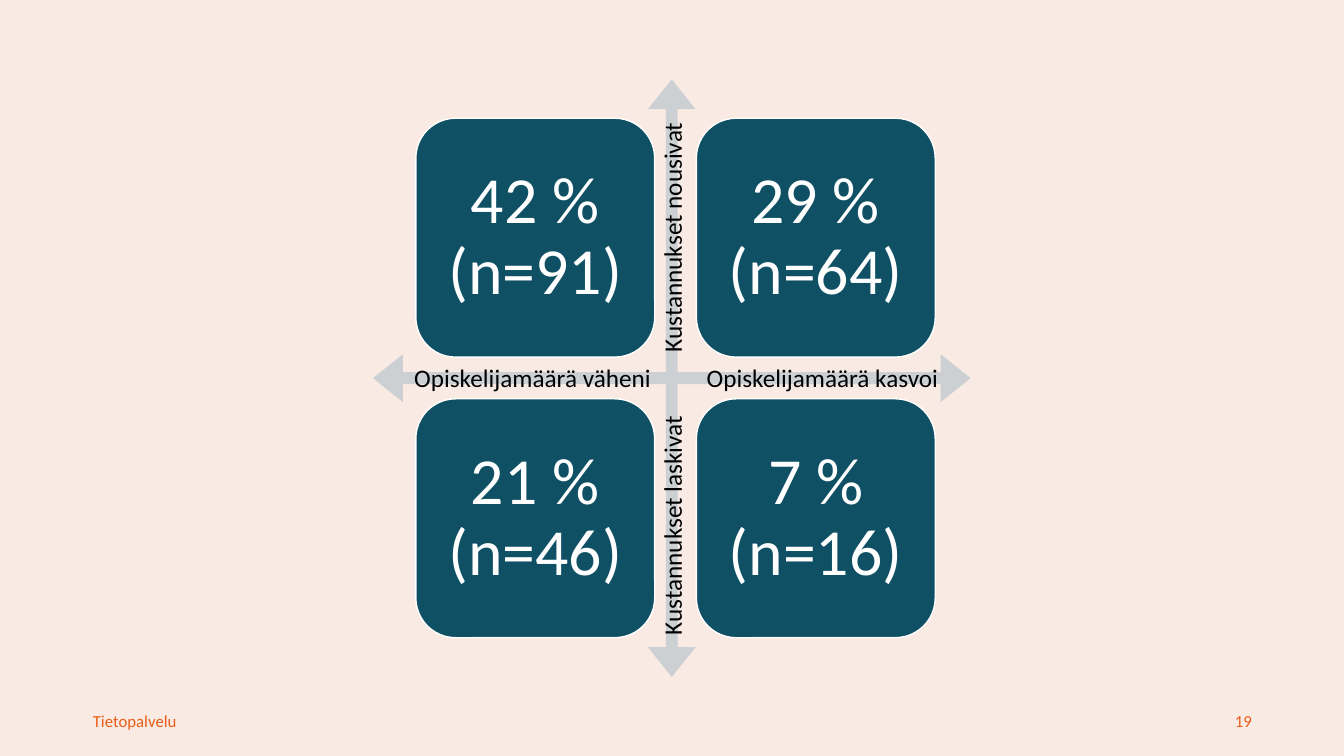
"""Build the slide of student numbers against costs."""
from pptx import Presentation
from pptx.dml.color import RGBColor
from pptx.enum.shapes import MSO_SHAPE
from pptx.enum.text import MSO_ANCHOR, PP_ALIGN
from pptx.util import Cm, Pt

TILES = [["42 % (n=91)", "29 % (n=64)"], ["21 % (n=46)", "7 % (n=16)"]]
LABELS = [
    ("Opiskelijamäärä väheni", 10.44, 9.14, 0),
    ("Opiskelijamäärä kasvoi", 17.81, 9.14, 0),
    ("Kustannukset nousivat", 13.87, 5.44, 270),
    ("Kustannukset laskivat", 13.87, 12.57, 270),
]
FOOTER = [
    ("Tietopalvelu", 2.34, 10.21, PP_ALIGN.LEFT),
    ("19", 23.93, 7.62, PP_ALIGN.RIGHT),
]
COLORS = {"back": "F9EBE3", "arrow": "CCD0D3", "tile": "0F5064",
          "white": "FFFFFF", "black": "000000", "foot": "EB5C18"}
LEFT, TOP, SIDE, STEP = 10.48, 2.98, 6.02, 7.07


def color(name):
    return RGBColor.from_string(COLORS[name])


def write(shape, text, size, ink, align=PP_ALIGN.LEFT, inset=0.0,
          anchor=MSO_ANCHOR.MIDDLE):
    frame = shape.text_frame
    frame.word_wrap = True
    frame.vertical_anchor = anchor
    frame.margin_left = frame.margin_right = Cm(inset)
    frame.margin_top = frame.margin_bottom = Cm(inset)
    para = frame.paragraphs[0]
    para.alignment = align
    run = para.add_run()
    run.text = text
    run.font.name = "Calibri"
    run.font.size = Pt(size)
    run.font.color.rgb = color(ink)
    return para


def draw(slide, kind, left, top, side, fill):
    shape = slide.shapes.add_shape(kind, Cm(left), Cm(top), Cm(side), Cm(side))
    shape.shadow.inherit = False
    shape.fill.solid()
    shape.fill.fore_color.rgb = color(fill)
    return shape


def main():
    deck = Presentation()
    deck.slide_width, deck.slide_height = Cm(33.87), Cm(19.05)
    slide = deck.slides.add_slide(deck.slide_layouts[6])
    slide.background.fill.solid()
    slide.background.fill.fore_color.rgb = color("back")

    for text, left, width, align in FOOTER:
        box = slide.shapes.add_textbox(Cm(left), Cm(17.68), Cm(width), Cm(0.97))
        write(box, text, 12, "foot", align)

    cross = draw(slide, MSO_SHAPE.QUAD_ARROW, 9.4, 2, 15.06, "arrow")
    cross.line.fill.background()
    for index, value in enumerate((0.02, 0.04, 0.05)):
        cross.adjustments[index] = value

    for row, texts in enumerate(TILES):
        for col, text in enumerate(texts):
            tile = draw(slide, MSO_SHAPE.ROUNDED_RECTANGLE,
                        LEFT + col * STEP, TOP + row * STEP, SIDE, "tile")
            tile.line.color.rgb = color("white")
            tile.line.width = Pt(1)
            para = write(tile, text, 47, "white", PP_ALIGN.CENTER, 0.5)
            para.line_spacing = 0.9

    for text, left, top, angle in LABELS:
        box = slide.shapes.add_textbox(Cm(left), Cm(top), Cm(6.12), Cm(0.76))
        box.rotation = angle
        write(box, text, 18, "black", anchor=MSO_ANCHOR.TOP)

    deck.save("out.pptx")


if __name__ == "__main__":
    main()
